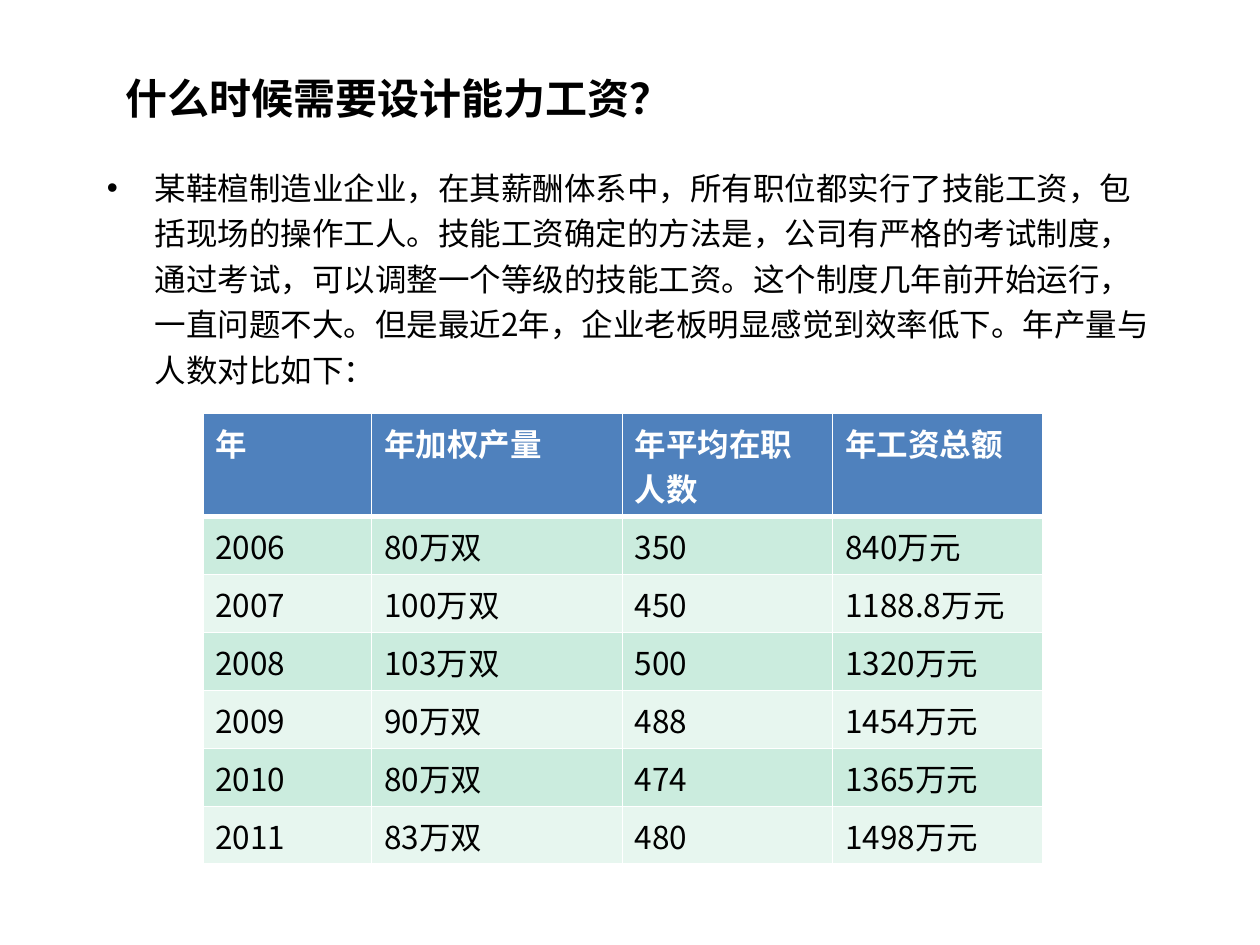
from lxml.etree import SubElement
from pptx import Presentation
from pptx.dml.color import RGBColor
from pptx.enum.text import MSO_ANCHOR
from pptx.oxml.ns import qn
from pptx.util import Inches, Pt

TITLE = "什么时候需要设计能力工资？"
BODY = (
    "某鞋楦制造业企业，在其薪酬体系中，所有职位都实行了技能工资，包括现场的操作工人。"
    "技能工资确定的方法是，公司有严格的考试制度，通过考试，可以调整一个等级的技能工资。"
    "这个制度几年前开始运行，一直问题不大。但是最近2年，企业老板明显感觉到效率低下。"
    "年产量与人数对比如下："
)
ROWS = [
    ("年", "年加权产量", "年平均在职人数", "年工资总额"),
    ("2006", "80万双", "350", "840万元"),
    ("2007", "100万双", "450", "1188.8万元"),
    ("2008", "103万双", "500", "1320万元"),
    ("2009", "90万双", "488", "1454万元"),
    ("2010", "80万双", "474", "1365万元"),
    ("2011", "83万双", "480", "1498万元"),
]
WIDTHS = (1.34, 1.99, 1.67, 1.67)
HEAD_H, ROW_H = 0.82, 0.46

BLACK = RGBColor(0x00, 0x00, 0x00)
WHITE = RGBColor(0xFF, 0xFF, 0xFF)
BLUE = RGBColor(0x4F, 0x81, 0xBD)
MINT = RGBColor(0xCB, 0xEC, 0xDE)
PALE = RGBColor(0xE7, 0xF6, 0xEF)

FACE = "Noto Sans CJK SC"
TEXT = {"name": FACE, "size": Pt(18), "bold": False}
HEAD = {**TEXT, "bold": True}
TOP = {**HEAD, "size": Pt(24)}


def write(para, text, look, color):
    run = para.add_run()
    run.text = text
    for key, value in look.items():
        setattr(run.font, key, value)
    run.font.color.rgb = color
    SubElement(run.font._element, qn("a:ea"), typeface=FACE)


def add_box(slide, place, anchor):
    frame = slide.shapes.add_textbox(*map(Inches, place)).text_frame
    frame.word_wrap = True
    frame.vertical_anchor = anchor
    return frame.paragraphs[0]


def add_bullet(para):
    props = para._p.get_or_add_pPr()
    props.set("marL", str(Inches(0.38)))
    props.set("indent", str(-Inches(0.38)))
    SubElement(props, qn("a:buFont"), typeface="Arial")
    SubElement(props, qn("a:buChar"), char="•")


def add_edges(cell, widths):
    props = cell._tc.get_or_add_tcPr()
    for side, width in zip("LRTB", widths):
        line = SubElement(props, qn(f"a:ln{side}"), w=str(Pt(width)))
        fill = SubElement(line, qn("a:solidFill"))
        SubElement(fill, qn("a:srgbClr"), val=str(WHITE))


def add_grid(slide):
    high = HEAD_H + ROW_H * (len(ROWS) - 1)
    place = (1.61, 3.28, sum(WIDTHS), high)
    table = slide.shapes.add_table(
        len(ROWS), len(WIDTHS), *map(Inches, place)
    ).table
    for col, width in zip(table.columns, WIDTHS):
        col.width = Inches(width)
    for r, row in enumerate(ROWS):
        table.rows[r].height = Inches(ROW_H if r else HEAD_H)
        look, color = (TEXT, BLACK) if r else (HEAD, WHITE)
        shade = (MINT if r % 2 else PALE) if r else BLUE
        edges = (1, 1, 3 if r == 1 else 1, 1 if r else 3)
        for c, text in enumerate(row):
            cell = table.cell(r, c)
            add_edges(cell, edges)
            cell.fill.solid()
            cell.fill.fore_color.rgb = shade
            write(cell.text_frame.paragraphs[0], text, look, color)


def main():
    deck = Presentation()
    deck.slide_width, deck.slide_height = Inches(10), Inches(7.5)
    slide = deck.slides.add_slide(deck.slide_layouts[6])
    title = add_box(slide, (0.9, 0.4, 8.25, 0.75), MSO_ANCHOR.MIDDLE)
    write(title, TITLE, TOP, BLACK)
    body = add_box(slide, (0.75, 1.23, 8.5, 2.91), MSO_ANCHOR.TOP)
    add_bullet(body)
    body.line_spacing = Pt(26)
    write(body, BODY, TEXT, BLACK)
    add_grid(slide)
    deck.save("out.pptx")


if __name__ == "__main__":
    main()
